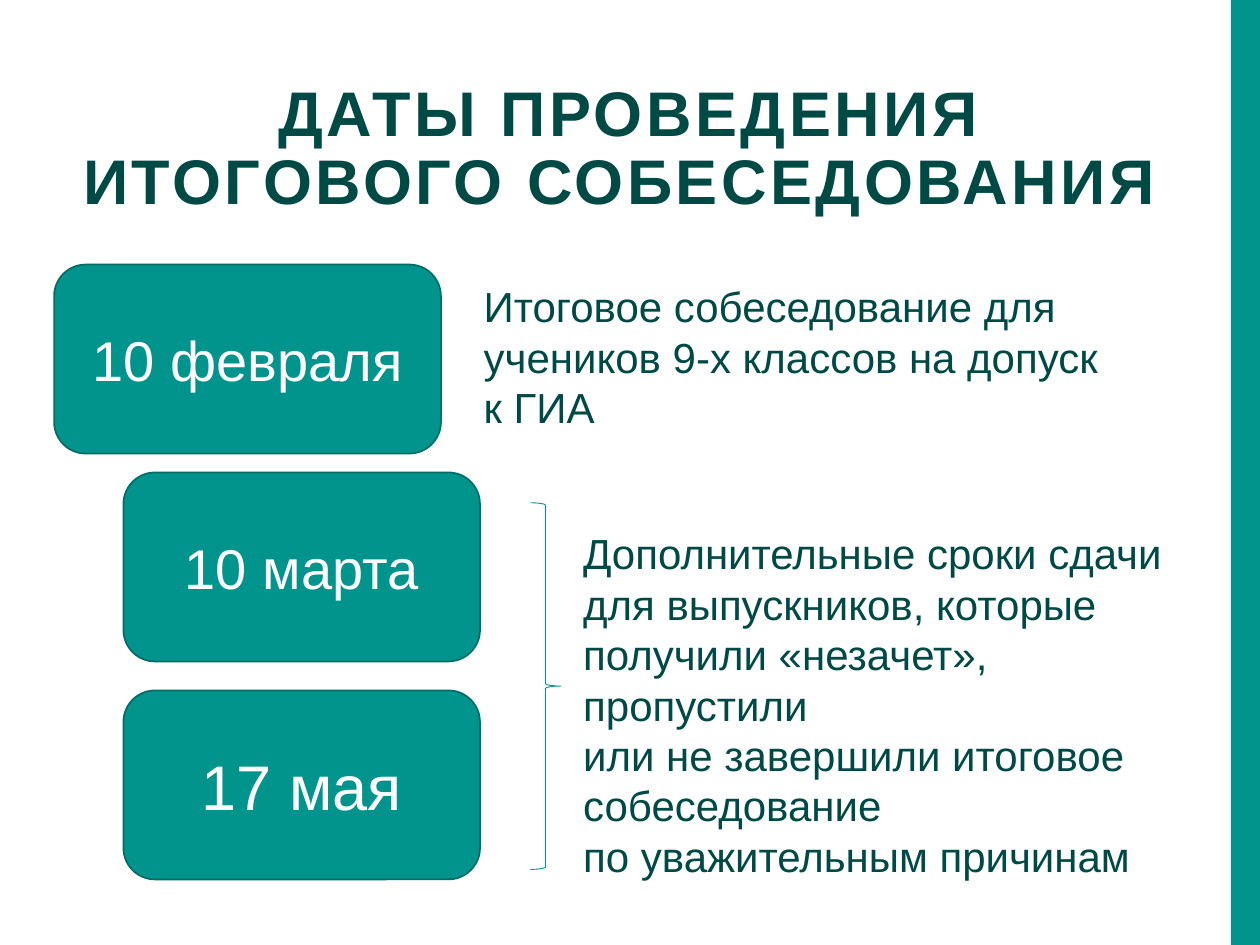
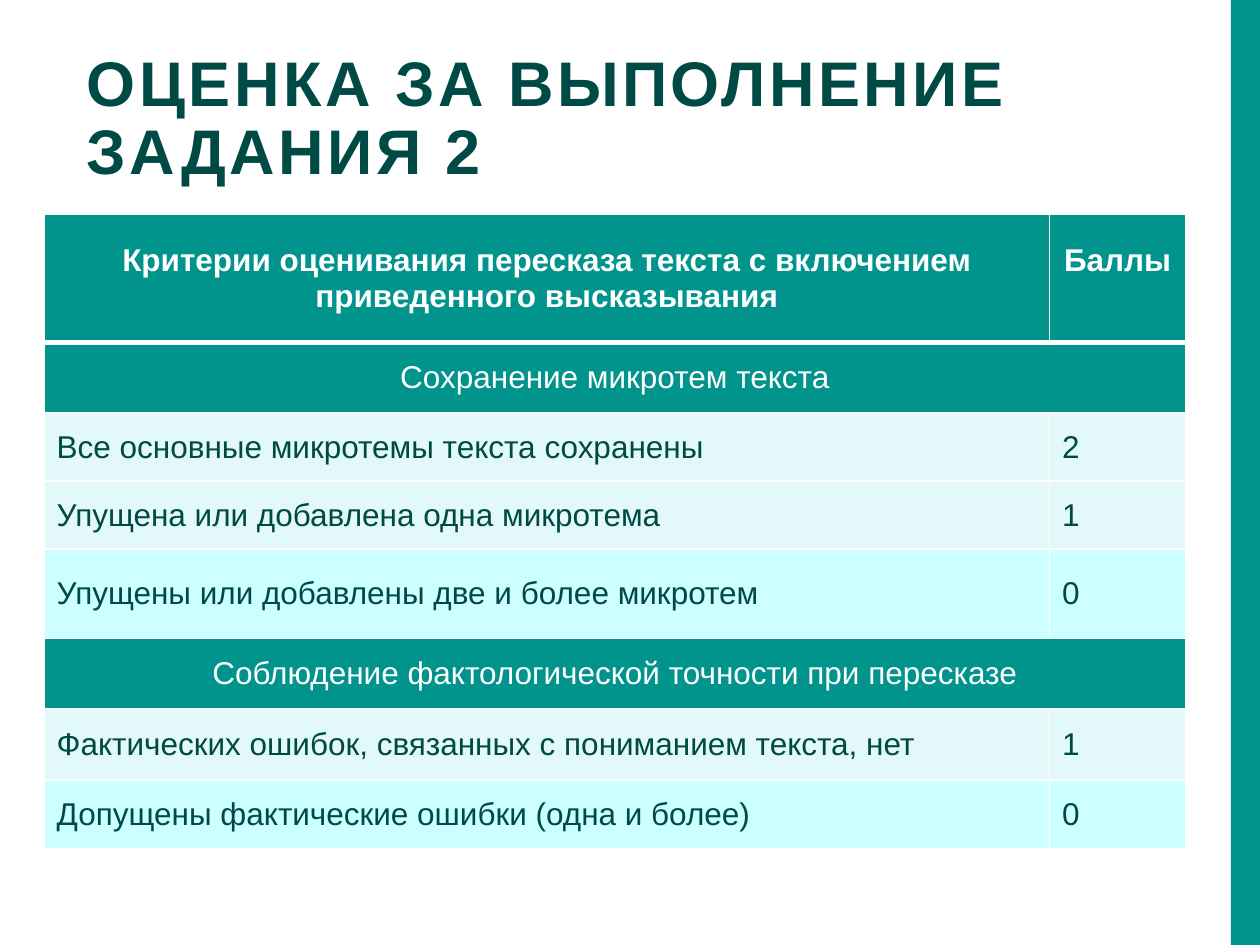
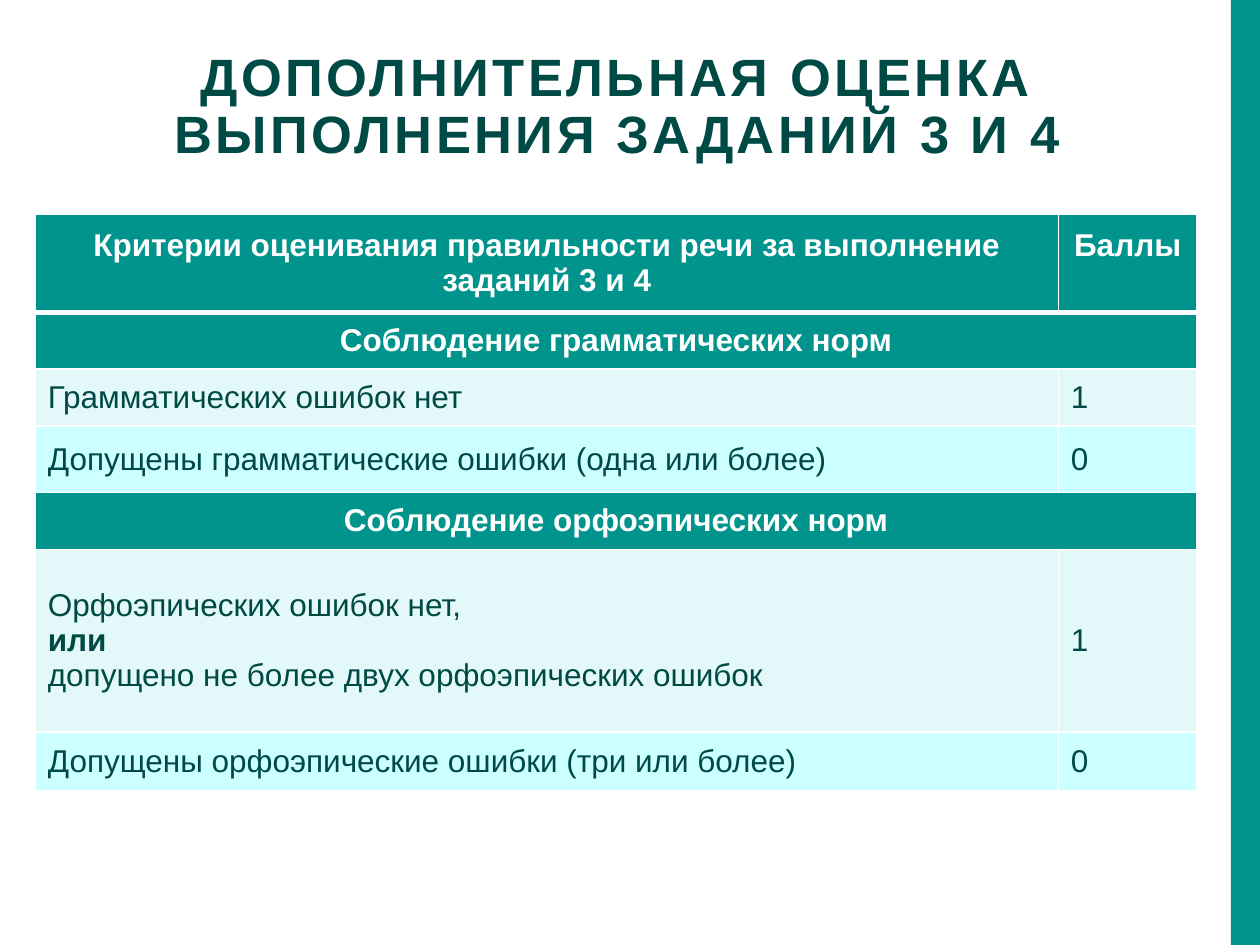
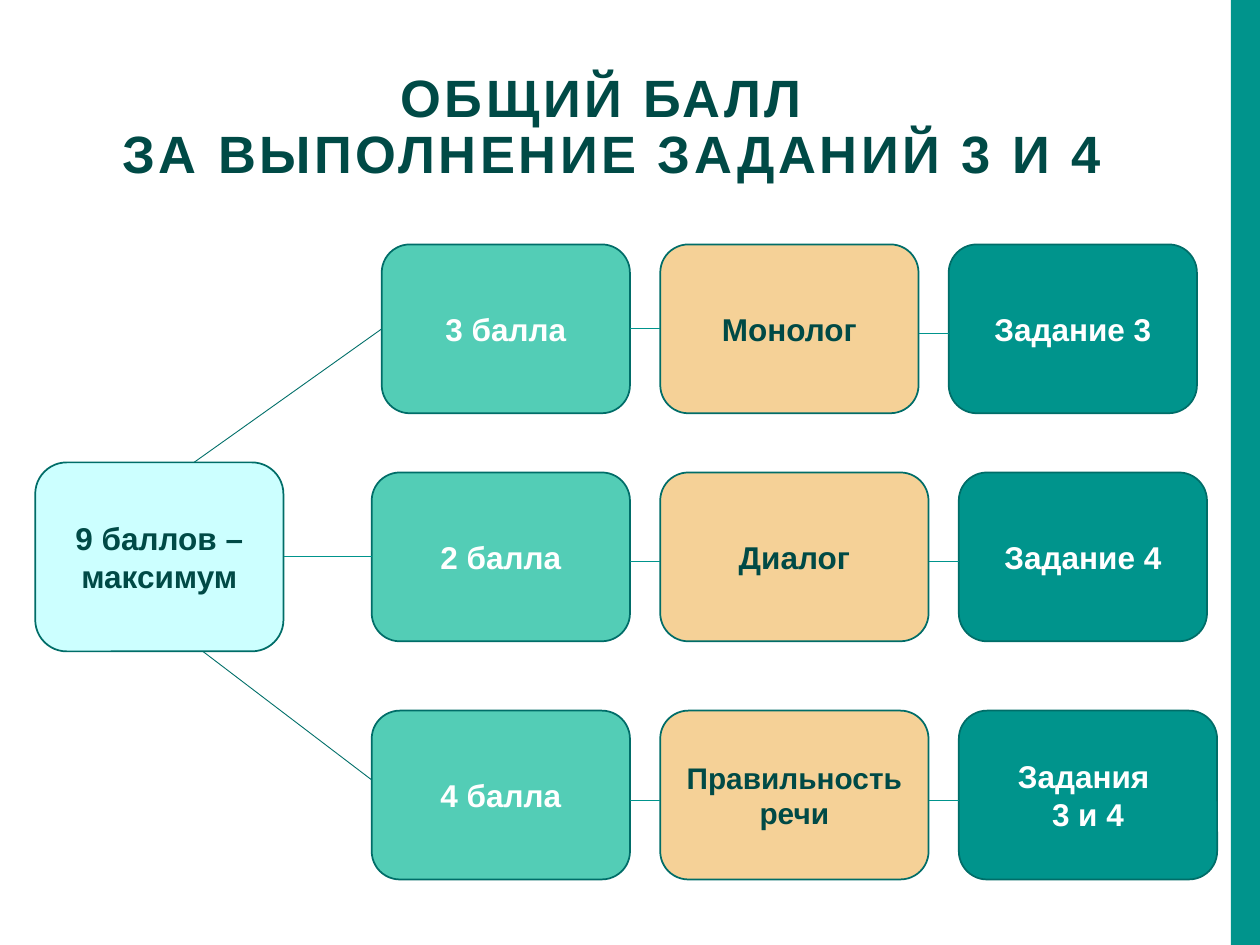
"""Build four slides about the dates and scoring of the final interview."""
from lxml.etree import SubElement
from pptx import Presentation
from pptx.dml.color import RGBColor
from pptx.enum.shapes import MSO_CONNECTOR as Connector, MSO_SHAPE as Preset
from pptx.enum.text import MSO_ANCHOR as Anchor, MSO_AUTO_SIZE as AutoSize, PP_ALIGN as Align
from pptx.oxml.ns import qn
from pptx.util import Emu, Pt

PX = 9144
TEAL, TEAL_EDGE, TEAL_LINK, DARK = "00948C", "006D68", "006F69", "004A46"
MINT, SAND, PALE, LIGHT, WHITE = "53CDB6", "F5D197", "CCFFFF", "E3F8F9", "FFFFFF"
FONT = "Arial"


def px(*lengths):
    return [Emu(round(length * PX)) for length in lengths]


def rgb(value):
    return RGBColor.from_string(value)


def write(frame, text, size=18, color=DARK, bold=False, align=Align.LEFT,
          anchor=Anchor.TOP, spacing=None, tracking=None):
    frame.word_wrap = True
    frame.vertical_anchor = anchor
    for index, content in enumerate(text.split("\n")):
        paragraph = frame.add_paragraph() if index else frame.paragraphs[0]
        paragraph.alignment = align
        if spacing:
            paragraph.line_spacing = spacing
        for part, piece in enumerate(content.split("\v")):
            if part:
                paragraph.add_line_break()
            run = paragraph.add_run()
            run.text = piece
            run.font.name, run.font.size, run.font.bold = FONT, Pt(size), bold
            run.font.color.rgb = rgb(color)
            if tracking:
                run.font._element.set("spc", str(tracking * 100))


def border(cell, bottom=1):
    properties = cell._tc.get_or_add_tcPr()
    for position, (side, width) in enumerate(
            (("lnL", 1), ("lnR", 1), ("lnT", 1), ("lnB", bottom))):
        line = SubElement(properties, qn(f"a:{side}"), w=str(Pt(width)))
        SubElement(SubElement(line, qn("a:solidFill")), qn("a:srgbClr"), val=WHITE)
        properties.insert(position, line)


class Deck:
    """Holds the shared style and the current slide."""

    def __init__(self):
        self.presentation = Presentation()
        self.presentation.slide_width, self.presentation.slide_height = px(1000, 750)
        self.layout = self.presentation.slide_layouts.get_by_name("Title Only")
        self.slide = None

    def add_slide(self, title, *place, size=36, align=Align.CENTER):
        first = self.slide is None
        self.slide = self.presentation.slides.add_slide(self.layout)
        shape = self.slide.shapes.title
        shape.left, shape.top, shape.width, shape.height = px(*place)
        shape.text_frame.auto_size = AutoSize.NONE
        write(shape.text_frame, title, size, bold=True, align=align,
              spacing=0.9, tracking=2)
        if first:
            self.add_master_band()

    def add_master_band(self):
        band = self.add_preset(Preset.RECTANGLE, 977, 0, 23, 750, fill=TEAL)
        band.element.nvSpPr.cNvPr.set("id", "100")
        self.presentation.slide_master.shapes.element.append(band.element)

    def add_preset(self, preset, *place, fill=None, line=None, weight=1):
        shape = self.slide.shapes.add_shape(preset, *px(*place))
        shape.shadow.inherit = False
        if fill:
            shape.fill.solid()
            shape.fill.fore_color.rgb = rgb(fill)
        else:
            shape.fill.background()
        if line:
            shape.line.color.rgb = rgb(line)
            shape.line.width = Pt(weight)
        else:
            shape.line.fill.background()
        return shape

    def add_box(self, text, *place, fill=TEAL, **style):
        shape = self.add_preset(Preset.ROUNDED_RECTANGLE, *place, fill=fill, line=TEAL_EDGE)
        write(shape.text_frame, text, align=Align.CENTER, anchor=Anchor.MIDDLE, **style)
        return shape

    def add_text(self, text, *place, **style):
        frame = self.slide.shapes.add_textbox(*px(*place)).text_frame
        write(frame, text, **style)
        frame.auto_size = AutoSize.SHAPE_TO_FIT_TEXT

    def add_link(self, *ends, color=TEAL, begin=None, end=None):
        connector = self.slide.shapes.add_connector(Connector.STRAIGHT, *px(*ends))
        connector.line.color.rgb = rgb(color)
        connector.line.width = Pt(0.5)
        SubElement(connector.element.spPr, qn("a:effectLst"))
        if begin:
            connector.begin_connect(begin, 3)
        if end:
            connector.end_connect(end, 1)

    def add_score_table(self, left, top, widths, rows, bold_sections):
        height = sum(row[0] for row in rows)
        table = self.slide.shapes.add_table(
            len(rows), 2, *px(left, top, sum(widths), height)).table
        table.first_row = table.horz_banding = False
        for column, width in zip(table.columns, px(*widths)):
            column.width = width
        for index, (row_height, fill, *texts) in enumerate(rows):
            table.rows[index].height = px(row_height)[0]
            header, colored = index == 0, fill == TEAL
            if len(texts) == 1:
                table.cell(index, 0).merge(table.cell(index, 1))
            for cell, text in zip(table.rows[index].cells, texts):
                write(cell.text_frame, text, color=WHITE if colored else DARK,
                      bold=header or colored and bold_sections,
                      align=Align.CENTER if colored else Align.LEFT)
            for cell in table.rows[index].cells:
                cell.vertical_anchor = Anchor.MIDDLE
                cell.fill.solid()
                cell.fill.fore_color.rgb = rgb(fill)
                border(cell, 3 if header else 1)
        table.cell(0, 1).margin_bottom = px(34)[0]
        return table


def build_dates(deck):
    deck.add_slide("ДАТЫ ПРОВЕДЕНИЯ ИТОГОВОГО СОБЕСЕДОВАНИЯ ", 50, 60, 900, 126)
    for date, left, top, width, size in (
            ("10 февраля", 43, 210, 307, 32),
            ("10 марта", 98, 375, 283, 32),
            ("17\u00a0мая", 98, 548, 283, 36)):
        deck.add_box(date, left, top, width, 150, size=size, color=WHITE)
    deck.add_text("Итоговое собеседование для учеников 9-х классов на допуск\nк ГИА",
                  374, 218, 598, 131, size=24)
    deck.add_text("Дополнительные сроки сдачи для выпускников, которые получили «незачет», "
                  "пропустили\nили не завершили итоговое собеседование\n"
                  "по уважительным причинам", 453, 414, 528, 293, size=24)
    deck.add_preset(Preset.RIGHT_BRACE, 421, 399, 24, 291, line=TEAL, weight=0.5)


def build_retelling_scores(deck):
    deck.add_slide("ОЦЕНКА ЗА ВЫПОЛНЕНИЕ ЗАДАНИЯ 2", 59, 36, 900, 63, align=Align.LEFT)
    deck.add_score_table(35, 170, (798, 108), (
        (102, TEAL, "Критерии оценивания пересказа текста с включением "
                    "приведенного высказывания", "Баллы"),
        (56, TEAL, "Сохранение микротем текста"),
        (54, LIGHT, "Все основные микротемы текста сохранены", "2"),
        (54, LIGHT, "Упущена или добавлена одна микротема", "1"),
        (71, PALE, "Упущены или добавлены две и более микротем", "0"),
        (56, TEAL, "Соблюдение фактологической точности при пересказе"),
        (56, LIGHT, "Фактических ошибок, связанных с пониманием текста, нет", "1"),
        (55, PALE, "Допущены фактические ошибки (одна и более)", "0"),
    ), bold_sections=False)


def build_speech_scores(deck):
    deck.add_slide("ДОПОЛНИТЕЛЬНАЯ ОЦЕНКА ВЫПОЛНЕНИЯ ЗАДАНИЙ 3 И 4",
                   0, 36, 980, 118, size=30)
    table = deck.add_score_table(28, 170, (812, 110), (
        (78, TEAL, "Критерии оценивания правильности речи за выполнение заданий 3 и 4",
         "Баллы"),
        (45, TEAL, "Соблюдение грамматических норм"),
        (45, LIGHT, "Грамматических ошибок нет", "1"),
        (53, PALE, "Допущены грамматические ошибки (одна или более)", "0"),
        (45, TEAL, "Соблюдение орфоэпических норм"),
        (145, LIGHT, "Орфоэпических ошибок нет,\nили\n"
                     "допущено не более двух орфоэпических ошибок", "1"),
        (47, PALE, "Допущены орфоэпические ошибки (три или более)", "0"),
    ), bold_sections=True)
    table.cell(5, 0).text_frame.paragraphs[1].runs[0].font.bold = True


def build_total(deck):
    deck.add_slide("ОБЩИЙ БАЛЛ \vЗА ВЫПОЛНЕНИЕ ЗАДАНИЙ 3 И 4", 0, 52, 972, 126, size=30)
    height, gap, middle = 134, 24, 67
    total = deck.add_box("9 баллов – максимум", 28, 367, 197, 150, fill=PALE, bold=True)
    columns = ((MINT, WHITE), (SAND, DARK), (TEAL, WHITE))
    points = []
    for top, left, widths, offsets, texts in (
            (194, 303, (197, 205, 197), (67, 71), ("3 балла", "Монолог", "Задание 3")),
            (375, 295, (205, 213, 197), (71, 71), ("2 балла", "Диалог", "Задание 4")),
            (564, 295, (205, 213, 205), (71, 71),
             ("4 балла", "Правильность речи", "Задания \n3 и 4"))):
        boxes = []
        for text, width, (fill, color) in zip(texts, widths, columns):
            size = 17 if text == "Правильность речи" else 18
            boxes.append(deck.add_box(text, left, top, width, height, fill=fill,
                                      color=color, size=size, bold=True))
            left += width + gap
        right = left - gap - widths[2]
        for before, after, offset, x in zip(boxes, boxes[1:], offsets, (524, right)):
            joined = offset == middle
            deck.add_link(x - gap, top + offset, x, top + offset,
                          begin=before if joined else None, end=after if joined else None)
        points.append(boxes[0])
    deck.add_link(154, 367, 303, 261, color=TEAL_LINK, end=points[0])
    deck.add_link(225, 442, 295, 442, begin=total, end=points[1])
    deck.add_link(161, 517, 295, 619, color=TEAL_LINK)


def main():
    deck = Deck()
    for build in (build_dates, build_retelling_scores, build_speech_scores, build_total):
        build(deck)
    deck.presentation.save("out.pptx")


if __name__ == "__main__":
    main()
